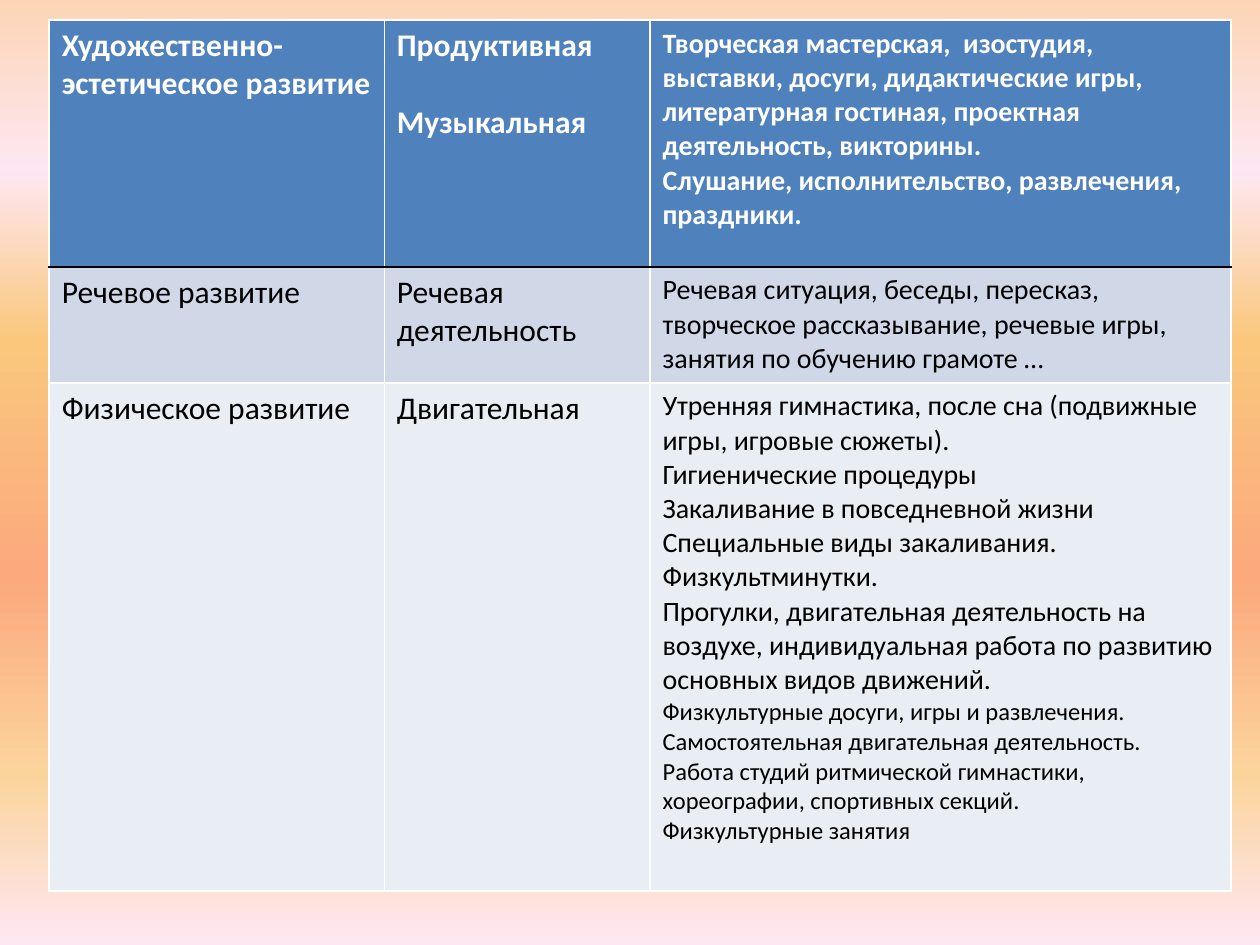
"""Build a slide with a table of child development areas, activities and forms of work."""
import pptx
import pptx.dml.color
import pptx.oxml
import pptx.oxml.ns
import pptx.util

Pt = pptx.util.Pt

THEME = {
    "font": "Calibri",
    "large": 18, "medium": 16, "small": 14,
    "white": "FFFFFF", "black": "000000",
    "header": "4F81BD", "band": "D0D8E8", "plain": "E9EDF4",
    "background": [(0, "FCD5B5", 60), (18, "FEE7F2", 100), (36, "FAC77D", 100),
                   (61, "FBA97D", 100), (82, "FBD49C", 100), (100, "FEE7F2", 100)],
}

ROWS = [
    {"height": 141, "fill": "header", "ink": "white", "bold": True,
     "top": "white", "bottom": "black",
     "cells": [
         [("large", ["Художественно-эстетическое развитие"])],
         [("large", ["Продуктивная", "Музыкальная"])],
         [("medium", [
             "Творческая мастерская,  изостудия, выставки, досуги, дидактические игры, "
             "литературная гостиная, проектная деятельность, викторины.",
             "Слушание, исполнительство, развлечения, праздники."])]]},
    {"height": 66.3, "fill": "band", "ink": "black", "bold": False,
     "top": "black", "bottom": "white",
     "cells": [
         [("large", ["Речевое развитие"])],
         [("large", ["Речевая деятельность"])],
         [("medium", [
             "Речевая ситуация, беседы, пересказ, творческое рассказывание, "
             "речевые игры, занятия по обучению грамоте …"])]]},
    {"height": 290.3, "fill": "plain", "ink": "black", "bold": False,
     "top": "white", "bottom": "white",
     "cells": [
         [("large", ["Физическое развитие"])],
         [("large", ["Двигательная"])],
         [("medium", [
             "Утренняя гимнастика, после сна (подвижные игры, игровые сюжеты).",
             "Гигиенические процедуры",
             "Закаливание в повседневной жизни Специальные виды закаливания. Физкультминутки.",
             "Прогулки, двигательная деятельность на воздухе, индивидуальная работа "
             "по развитию основных видов движений."]),
          ("small", [
              "Физкультурные досуги, игры и развлечения.",
              "Самостоятельная двигательная деятельность.",
              "Работа студий ритмической гимнастики, хореографии, спортивных секций.",
              "Физкультурные занятия"])]]},
]
COLUMNS = [191.5, 151.9, 331.9]
LEFT, TOP = 28.1, 11.5
ACTIVITY_GAP = 22


def color(name):
    return pptx.dml.color.RGBColor.from_string(THEME[name])


def paint_background(page):
    fill = page.background.fill
    fill.gradient()
    fill.gradient_angle = 270
    stops = page.element.find(".//" + pptx.oxml.ns.qn("a:gsLst"))
    for stop in list(stops):
        stops.remove(stop)
    for place, value, opacity in THEME["background"]:
        stops.append(pptx.oxml.parse_xml(
            f'<a:gs {pptx.oxml.ns.nsdecls("a")} pos="{place * 1000}">'
            f'<a:srgbClr val="{value}"><a:alpha val="{opacity * 1000}"/></a:srgbClr></a:gs>'))


def draw_borders(cell, top, bottom):
    sides = {"L": "white", "R": "white", "T": top, "B": bottom}
    properties = cell._tc.get_or_add_tcPr()
    for index, (side, name) in enumerate(sides.items()):
        properties.insert(index, pptx.oxml.parse_xml(
            f'<a:ln{side} {pptx.oxml.ns.nsdecls("a")} w="{Pt(1)}"><a:solidFill>'
            f'<a:srgbClr val="{THEME[name]}"/></a:solidFill></a:ln{side}>'))


def write_cell(cell, groups, row, gap):
    lines = [(size, text) for size, texts in groups for text in texts]
    for index, (size, text) in enumerate(lines):
        para = cell.text_frame.add_paragraph() if index else cell.text_frame.paragraphs[0]
        if index and gap:
            para.space_before = Pt(gap)
        span = para.add_run()
        span.text = text
        formats = {"name": THEME["font"], "size": Pt(THEME[size]), "bold": row["bold"]}
        for key, value in formats.items():
            setattr(span.font, key, value)
        span.font.color.rgb = color(row["ink"])


def add_development_table(page):
    heights = [row["height"] for row in ROWS]
    frame = page.shapes.add_table(len(ROWS), len(COLUMNS), Pt(LEFT), Pt(TOP),
                                  Pt(sum(COLUMNS)), Pt(sum(heights)))
    table = frame.table
    for column, width in zip(table.columns, COLUMNS):
        column.width = Pt(width)
    for line, row in zip(table.rows, ROWS):
        line.height = Pt(row["height"])
        for index, (cell, groups) in enumerate(zip(line.cells, row["cells"])):
            cell.fill.solid()
            cell.fill.fore_color.rgb = color(row["fill"])
            draw_borders(cell, row["top"], row["bottom"])
            write_cell(cell, groups, row, ACTIVITY_GAP if index == 1 else 0)


def main():
    deck = pptx.Presentation()
    deck.slide_width, deck.slide_height = Pt(720), Pt(540)
    page = deck.slides.add_slide(deck.slide_layouts[6])
    paint_background(page)
    add_development_table(page)
    deck.save("out.pptx")


if __name__ == "__main__":
    main()
